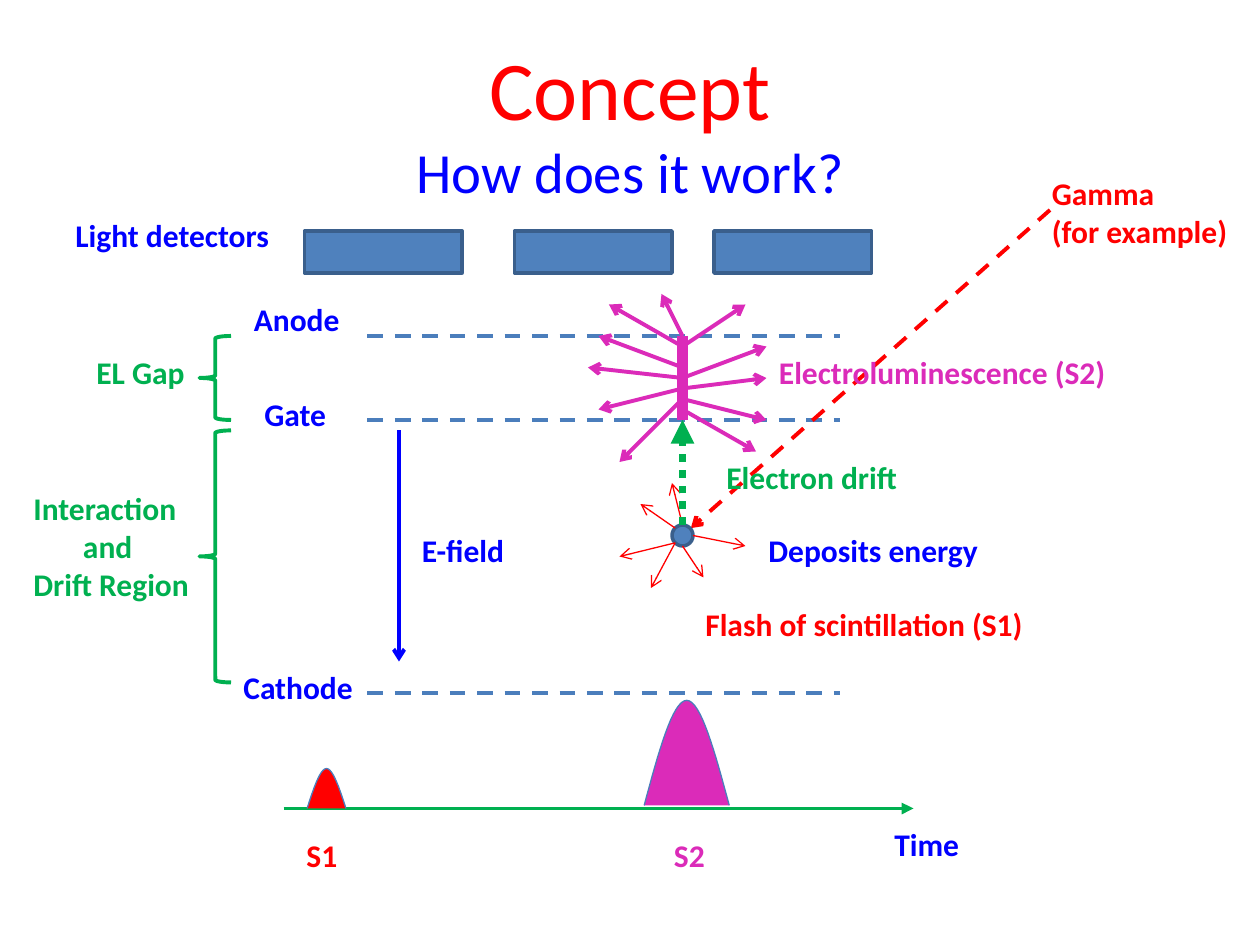
import collections

import lxml.etree
import pptx
import pptx.dml.color
import pptx.enum.dml
import pptx.enum.shapes
import pptx.enum.text
import pptx.oxml.ns
import pptx.util

RED = pptx.dml.color.RGBColor(0xFF, 0x00, 0x00)
BLUE = pptx.dml.color.RGBColor(0x00, 0x00, 0xFF)
GREEN = pptx.dml.color.RGBColor(0x00, 0xB0, 0x50)
MAGENTA = pptx.dml.color.RGBColor(0xDB, 0x2B, 0xB9)
STEEL = pptx.dml.color.RGBColor(0x4F, 0x81, 0xBD)
STEEL_EDGE = pptx.dml.color.RGBColor(0x3A, 0x5F, 0x8C)
STEEL_LINE = pptx.dml.color.RGBColor(0x4B, 0x7E, 0xBC)

DASH = pptx.enum.dml.MSO_LINE.DASH
DOT = pptx.enum.dml.MSO_LINE.ROUND_DOT
SHAPES = pptx.enum.shapes.MSO_SHAPE
GRID_CM = 2.54 / 12

Box = collections.namedtuple("Box", "left top width height")


def grid(count):
    """Turn a count of grid steps, twelve to the inch, into a length."""
    return pptx.util.Cm(count * GRID_CM)


def add_run(paragraph, text, size, color, bold=False):
    """Add one styled run to a paragraph."""
    run = paragraph.add_run()
    run.text = text
    run.font.name = "Calibri"
    run.font.size = pptx.util.Pt(size)
    run.font.bold = bold
    run.font.color.rgb = color


def add_label(slide, box, x, y, width, lines, color, wrap=False):
    """Add a bold label at an offset within the box and return its paragraphs."""
    height = 1.2 + 3.65 * len(lines)
    label = slide.shapes.add_textbox(
        grid(box.left + x), grid(box.top + y), grid(width), grid(height))
    frame = label.text_frame
    frame.word_wrap = wrap
    frame.auto_size = pptx.enum.text.MSO_AUTO_SIZE.SHAPE_TO_FIT_TEXT
    for index, line in enumerate(lines):
        paragraph = frame.add_paragraph() if index else frame.paragraphs[0]
        add_run(paragraph, line, 18, color, bold=True)
    return frame.paragraphs


def add_line(slide, box, start, end, color, width=2.25, dash=None, head=None):
    """Add a straight line between two offsets within the box."""
    line = slide.shapes.add_connector(
        pptx.enum.shapes.MSO_CONNECTOR.STRAIGHT,
        grid(box.left + start[0]), grid(box.top + start[1]),
        grid(box.left + end[0]), grid(box.top + end[1]))
    line.line.color.rgb = color
    line.line.width = pptx.util.Pt(width)
    if dash:
        line.line.dash_style = dash
    if head:
        lxml.etree.SubElement(
            line.get_or_add_ln(), pptx.oxml.ns.qn("a:tailEnd"), type=head)
    lxml.etree.SubElement(line.element.spPr, pptx.oxml.ns.qn("a:effectLst"))


def style_shape(shape, fill, edge, width):
    """Set fill and outline and remove the shadow."""
    shape.shadow.inherit = False
    if fill is None:
        shape.fill.background()
    else:
        shape.fill.solid()
        shape.fill.fore_color.rgb = fill
    shape.line.color.rgb = edge
    shape.line.width = pptx.util.Pt(width)


def add_preset(slide, box, kind, x, y, width, height, fill, edge, line_width):
    """Add a preset shape at an offset within the box."""
    shape = slide.shapes.add_shape(
        kind, grid(box.left + x), grid(box.top + y), grid(width), grid(height))
    style_shape(shape, fill, edge, line_width)


def add_peak(slide, box, x, y, width, height, color):
    """Add a bell-shaped pulse that is open at its base."""
    steps = 16
    rise = []
    for step in range(steps + 1):
        t = step / steps
        across = 3 * t * (1 - t) ** 2 / 6 + 3 * t ** 2 * (1 - t) / 3 + t ** 3 / 2
        down = (1 - t) ** 3 + 1.5 * t * (1 - t) ** 2
        rise.append((across, down))
    fall = [(1 - across, down) for across, down in reversed(rise[:-1])]
    points = [(grid(box.left + x + across * width), grid(box.top + y + down * height))
              for across, down in rise + fall]
    builder = slide.shapes.build_freeform(*points[0])
    builder.add_line_segments(points[1:], close=False)
    style_shape(builder.convert_to_shape(), color, STEEL_LINE, 0.75)


def add_heading(slide, box):
    """Place the title and the question below it."""
    heading = slide.shapes.add_textbox(
        grid(box.left), grid(box.top), grid(box.width), grid(box.height))
    frame = heading.text_frame
    frame.word_wrap = True
    frame.vertical_anchor = pptx.enum.text.MSO_ANCHOR.MIDDLE
    paragraph = frame.paragraphs[0]
    paragraph.alignment = pptx.enum.text.PP_ALIGN.CENTER
    add_run(paragraph, "Concept", 47.7, RED)
    paragraph.add_line_break()
    add_run(paragraph, "How does it work?", 32.4, BLUE)


def add_detectors(slide, box):
    """Place the row of light detectors with its label."""
    add_label(slide, box, 0, 0, 21, ["Light detectors"], BLUE)
    for x in (23, 43, 62):
        add_preset(slide, box, SHAPES.RECTANGLE, x, 2, 15, 4, STEEL, STEEL_EDGE, 2)


def add_chamber(slide, box):
    """Place the electrodes, the field arrow and the braced regions."""
    for y in (4, 12, 38):
        add_line(slide, box, (33, y), (78, y), STEEL_LINE, dash=DASH)
    for name, x, y, width in (("Anode", 21, 0, 10.7), ("Gate", 22, 9, 8.4),
                              ("Cathode", 20, 35, 13), ("E-field", 37, 22, 10.4)):
        add_label(slide, box, x, y, width, [name], BLUE)
    add_line(slide, box, (36, 13), (36, 35), BLUE, head="arrow")
    for y, height in ((4, 8), (13, 24)):
        add_preset(slide, box, SHAPES.LEFT_BRACE, 17, y, 3, height, None, GREEN, 2.25)
    add_label(slide, box, 6, 5, 10.8, ["EL Gap"], GREEN)
    region = add_label(
        slide, box, 0, 18, 17.4, ["Interaction", "and", "Drift Region"], GREEN)
    region[1]._p.get_or_add_pPr().set("marL", str(pptx.util.Cm(1)))


def add_interaction(slide, box):
    """Place the gamma track, the scintillation flash and the electron drift."""
    add_line(slide, box, (41, 4), (6.8, 34.3), RED, dash=DASH, head="arrow")
    add_label(slide, box, 40, 0, 21, ["Gamma", "(for example)"], RED, wrap=True)
    add_preset(slide, box, SHAPES.OVAL, 5, 34, 2, 2, STEEL, STEEL_EDGE, 2)
    for start, end in (((5.3, 34.3), (2, 32)), ((5.3, 35.7), (0, 37)),
                       ((5.3, 35.7), (3, 40)), ((7, 35), (12, 36)),
                       ((6, 36), (8, 39)), ((6, 34), (5, 30))):
        add_line(slide, box, start, end, RED, 0.75, head="arrow")
    add_line(slide, box, (6, 34), (6, 24), GREEN, 4.5, DOT, "triangle")
    add_label(slide, box, 13, 34, 22.8, ["Deposits energy"], BLUE)
    add_label(slide, box, 7, 41, 32.9, ["Flash of scintillation (S1)"], RED)
    add_label(slide, box, 9, 27, 18.8, ["Electron drift"], GREEN)


def add_electroluminescence(slide, box):
    """Place the glowing column with its light rays."""
    column = 9
    add_line(slide, box, (column, 4), (column, 12), MAGENTA, 6)
    for start_y, end in ((5, (2, 1)), (7, (1, 4)), (8, (0, 7)), (9, (1, 11)),
                         (10, (3, 16)), (5, (15, 1)), (9, (17, 8)), (8, (17, 5)),
                         (10, (17, 12)), (11, (16, 15)), (4, (7, 0))):
        add_line(slide, box, (column, start_y), end, MAGENTA, head="arrow")
    add_label(slide, box, 17, 5, 33.7, ["Electroluminescence (S2)"], MAGENTA)


def add_timeline(slide, box):
    """Place the time axis with the two signal pulses."""
    add_line(slide, box, (0, 11), (60, 11), GREEN, head="triangle")
    add_label(slide, box, 57, 12, 8.6, ["Time"], BLUE)
    add_peak(slide, box, 2.25, 7.2, 3.7, 3.8, RED)
    add_peak(slide, box, 34.35, 0.7, 8.1, 10, MAGENTA)
    for signal, x, color in (("S1", 1, RED), ("S2", 36, MAGENTA)):
        add_label(slide, box, x, 13, 5.4, [signal], color, wrap=True)


def main():
    """Build the slide and save it."""
    deck = pptx.Presentation()
    deck.slide_width = pptx.util.Cm(25.4)
    deck.slide_height = pptx.util.Cm(19.05)
    slide = deck.slides.add_slide(deck.slide_layouts[6])
    add_heading(slide, Box(6, 2.5, 108, 18))
    add_detectors(slide, Box(6, 20, 77, 6))
    add_chamber(slide, Box(2, 28, 78, 40))
    add_interaction(slide, Box(59, 16, 61, 46))
    add_electroluminescence(slide, Box(56, 28, 51, 16))
    add_timeline(slide, Box(27, 66, 66, 18))
    deck.save("out.pptx")


if __name__ == "__main__":
    main()
